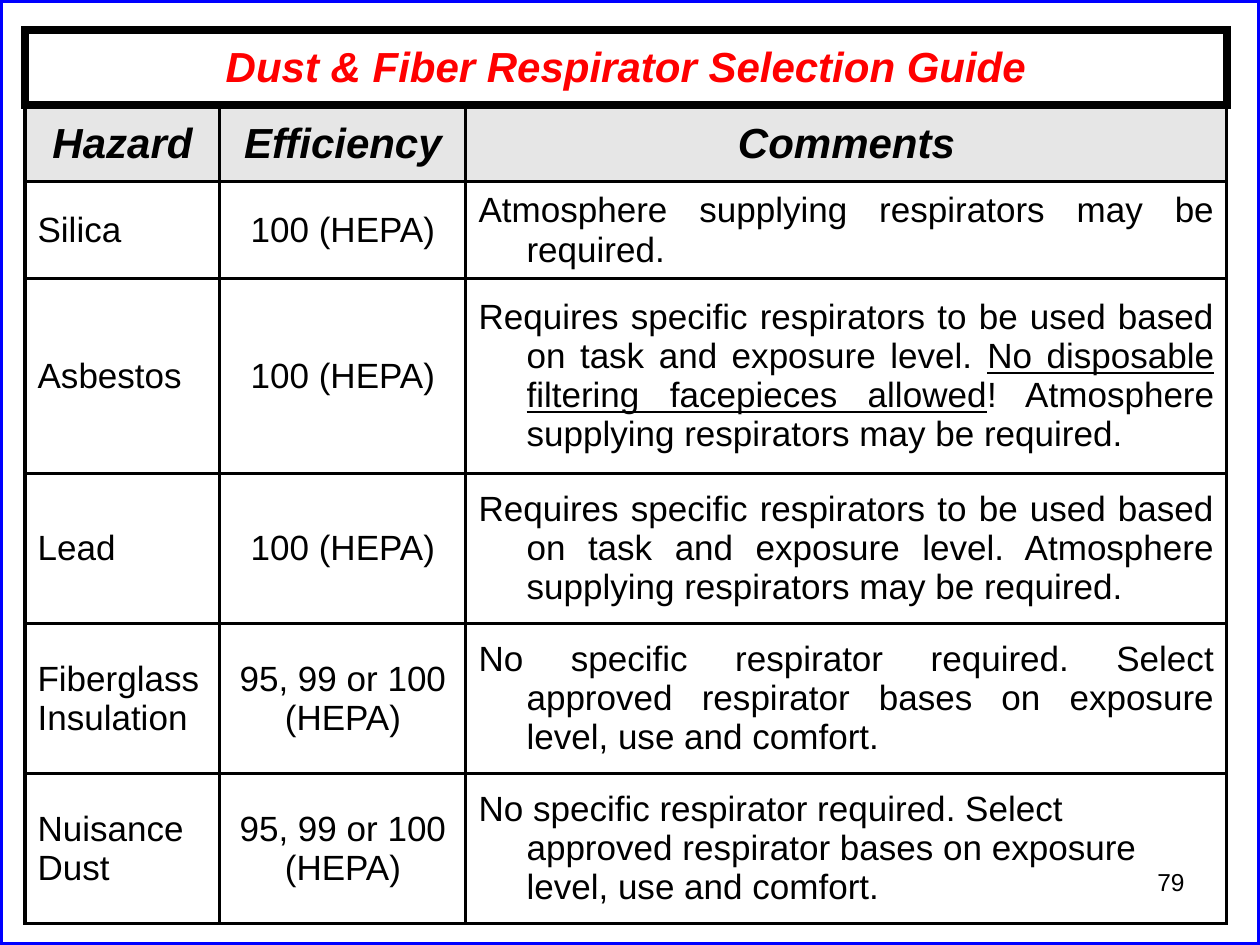
from dataclasses import dataclass

from lxml import etree
from pptx import Presentation
from pptx import util as u
from pptx.dml.color import RGBColor
from pptx.enum import shapes, text
from pptx.oxml.ns import qn

BLACK = RGBColor(0x00, 0x00, 0x00)
RED = RGBColor(0xFF, 0x00, 0x00)
BLUE = RGBColor(0x00, 0x00, 0xFF)
GREY = RGBColor(0xE6, 0xE6, 0xE6)

LEFT, MID, JUST, RIGHT = (
    text.PP_ALIGN.LEFT, text.PP_ALIGN.CENTER,
    text.PP_ALIGN.JUSTIFY, text.PP_ALIGN.RIGHT,
)
COLS = [195, 246, 761]
ROWS = [75, 77, 96, 195, 150, 150, 150]
HANG = 48
THIN, THICK = 2, 5

BODY = {"name": "Arial", "size": u.Pt(20), "bold": False, "italic": False}
HEAD = {"name": "Arial", "size": u.Pt(24), "bold": True, "italic": True}
PAGE = {"name": "Arial", "size": u.Pt(14)}

TASK = "Requires specific respirators to be used based on task and exposure level. "
BAN = "No disposable filtering facepieces allowed"
AIR = "Atmosphere supplying respirators may be required."
EASY = ("No specific respirator required. Select approved respirator bases "
        "on exposure level, use and comfort.")


@dataclass
class Hazard:
    name: str
    grade: str
    note: str
    align: text.PP_ALIGN = JUST


HAZARDS = [
    Hazard("Silica", "100 (HEPA)", AIR),
    Hazard("Asbestos", "100 (HEPA)", f"{TASK}_{BAN}_! {AIR}"),
    Hazard("Lead", "100 (HEPA)", TASK + AIR),
    Hazard("Fiberglass\nInsulation", "95, 99 or 100\n(HEPA)", EASY),
    Hazard("Nuisance\nDust", "95, 99 or 100\n(HEPA)", EASY, LEFT),
]


def px(n: int) -> int:
    return round(n * 914400 / 126)


def write(frame, words: str, align, form: dict, color=BLACK, hang: int = 0) -> None:
    """Write one paragraph per line; words between underscores are underlined."""
    for i, line in enumerate(words.split("\n")):
        para = frame.add_paragraph() if i else frame.paragraphs[0]
        para.alignment = align
        if hang:
            props = para._p.get_or_add_pPr()
            props.set("marL", str(px(hang)))
            props.set("indent", str(-px(hang)))
        for j, part in enumerate(line.split("_")):
            run = para.add_run()
            run.text = part
            for key, value in form.items():
                setattr(run.font, key, value)
            run.font.color.rgb = color
            if j % 2:
                run.font.underline = True


def edge(cell, widths: dict) -> None:
    """Draw the cell's borders, given in points by side."""
    props = cell._tc.get_or_add_tcPr()
    for side, width in widths.items():
        line = etree.SubElement(props, qn(f"a:ln{side}"), w=str(u.Pt(width)))
        fill = etree.SubElement(line, qn("a:solidFill"))
        etree.SubElement(fill, qn("a:srgbClr"), val=str(BLACK))


def fill_cell(cell, words: str, align, form: dict, color=BLACK) -> None:
    cell.vertical_anchor = text.MSO_ANCHOR.MIDDLE
    write(cell.text_frame, words, align, form, color, HANG)


def add_frame(slide) -> None:
    box = slide.shapes.add_shape(
        shapes.MSO_SHAPE.RECTANGLE, 0, 0, px(1260), px(945))
    box.shadow.inherit = False
    box.fill.background()
    box.line.color.rgb = BLUE
    box.line.width = u.Pt(3)


def add_page(slide) -> None:
    box = slide.shapes.add_textbox(px(903), px(861), px(294), px(66))
    box.text_frame.word_wrap = True
    write(box.text_frame, "79", RIGHT, PAGE)


def add_guide(slide) -> None:
    grid = slide.shapes.add_table(
        len(ROWS), len(COLS), px(25), px(30), px(sum(COLS)), px(sum(ROWS))).table
    grid.first_row = grid.horz_banding = False
    for col, width in zip(grid.columns, COLS):
        col.width = px(width)
    for row, height in zip(grid.rows, ROWS):
        row.height = px(height)

    for r in range(len(ROWS)):
        side = THIN if r else THICK
        top = THICK if r < 2 else THIN
        for c in range(len(COLS)):
            cell = grid.cell(r, c)
            edge(cell, {"L": side, "R": side, "T": top, "B": side})
            if r == 1:
                cell.fill.solid()
                cell.fill.fore_color.rgb = GREY
            else:
                cell.fill.background()

    title = grid.cell(0, 0)
    title.merge(grid.cell(0, len(COLS) - 1))
    fill_cell(title, "Dust & Fiber Respirator Selection Guide", MID, HEAD, RED)
    for c, name in enumerate(["Hazard", "Efficiency", "Comments"]):
        fill_cell(grid.cell(1, c), name, MID, HEAD)
    for r, item in enumerate(HAZARDS, 2):
        fill_cell(grid.cell(r, 0), item.name, LEFT, BODY)
        fill_cell(grid.cell(r, 1), item.grade, MID, BODY)
        fill_cell(grid.cell(r, 2), item.note, item.align, BODY)


def main() -> None:
    deck = Presentation()
    deck.slide_width, deck.slide_height = px(1260), px(945)
    slide = deck.slides.add_slide(deck.slide_layouts[6])
    add_frame(slide)
    add_page(slide)
    add_guide(slide)
    deck.save("out.pptx")


if __name__ == "__main__":
    main()
